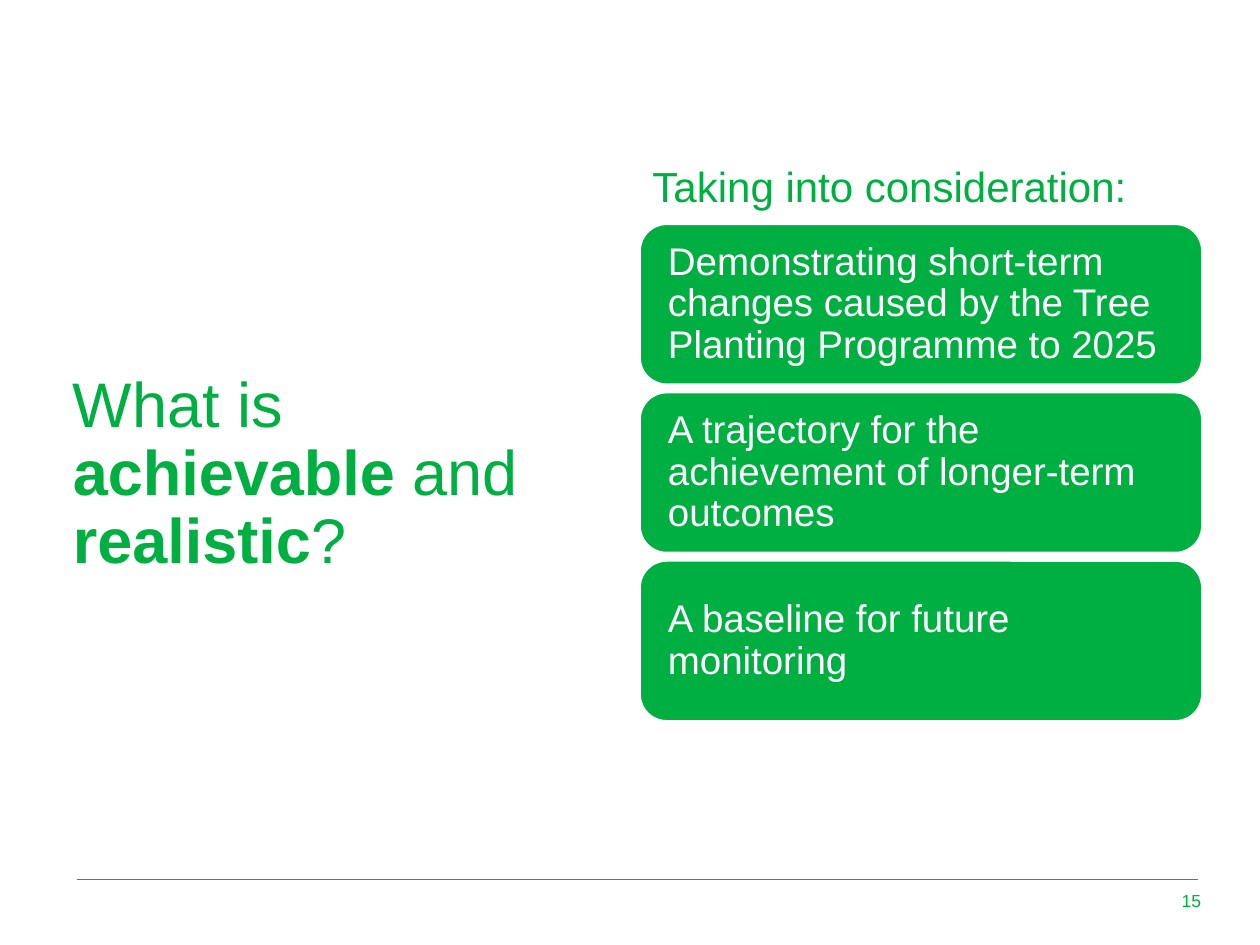
from dataclasses import dataclass

from lxml.etree import SubElement
from pptx import Presentation
from pptx.dml.color import RGBColor
from pptx.enum.shapes import MSO_CONNECTOR as CONN, MSO_SHAPE as SHAPE
from pptx.enum.text import MSO_ANCHOR as ANCHOR, PP_ALIGN as ALIGN
from pptx.oxml.ns import qn
from pptx.util import Inches, Pt


@dataclass(frozen=True)
class Theme:
    font: str = "Arial"
    green: RGBColor = RGBColor(0x00, 0xAF, 0x41)
    white: RGBColor = RGBColor(0xFF, 0xFF, 0xFF)
    question: int = 36
    heading: int = 24
    card: int = 22
    number: int = 10


class Page:
    COLS, ROWS = 100, 75

    def __init__(self, prs, theme):
        self.theme = theme
        self.slide = prs.slides.add_slide(prs.slide_layouts[6])
        self.col = prs.slide_width / self.COLS
        self.row = prs.slide_height / self.ROWS

    def box(self, x, y, w, h):
        return (round(x * self.col), round(y * self.row),
                round(w * self.col), round(h * self.row))

    def fill_text(self, sp, runs, size, color, anchor=ANCHOR.TOP,
                  align=ALIGN.LEFT, spacing=0.9, before=0):
        tf = sp.text_frame
        tf.word_wrap = True
        tf.vertical_anchor = anchor
        p = tf.paragraphs[0]
        p.alignment = align
        p.line_spacing = spacing
        p.space_before = Pt(before)
        for text, bold in runs:
            r = p.add_run()
            r.text = text
            r.font.name = self.theme.font
            r.font.size = Pt(size)
            r.font.bold = bold
            r.font.color.rgb = color

    def text(self, area, runs, size, **style):
        sp = self.slide.shapes.add_textbox(*self.box(*area))
        self.fill_text(sp, runs, size, self.theme.green, **style)

    def card(self, area, text):
        sp = self.slide.shapes.add_shape(SHAPE.ROUNDED_RECTANGLE, *self.box(*area))
        sp.shadow.inherit = False
        sp.fill.solid()
        sp.fill.fore_color.rgb = self.theme.green
        sp.line.color.rgb = self.theme.white
        sp.line.width = Pt(1)
        tf = sp.text_frame
        tf.margin_left = tf.margin_right = Inches(0.16)
        self.fill_text(sp, [(text, False)], self.theme.card, self.theme.white,
                       anchor=ANCHOR.MIDDLE)

    def rule(self, x, y, w):
        left, top, width, _ = self.box(x, y, w, 0)
        line = self.slide.shapes.add_connector(CONN.STRAIGHT, left, top, left + width, top)
        line.line.color.rgb = self.theme.green
        line.line.width = Pt(0.5)
        SubElement(line._element.spPr, qn("a:effectLst"))


def main():
    prs = Presentation()
    prs.slide_width, prs.slide_height = Inches(10), Inches(7.5)
    theme = Theme()
    page = Page(prs, theme)

    page.rule(6.1, 69.8, 89)
    question = [("What is ", False), ("achievable", True), (" and ", False),
                ("realistic", True), ("?", False)]
    page.text((4.8, 29.1, 45.2, 17.9), question, theme.question, before=10)
    page.text((91.8, 69.5, 4.5, 4), [("15", False)], theme.number,
              anchor=ANCHOR.MIDDLE, align=ALIGN.RIGHT, spacing=1)

    considerations = [
        "Demonstrating short-term changes caused by the Tree Planting Programme to 2025",
        "A trajectory for the achievement of longer-term outcomes",
        "A baseline for future monitoring",
    ]
    left, top, width, height, pitch = 50.8, 17.8, 44.6, 12.7, 13.36
    for i, text in enumerate(considerations):
        page.card((left, top + i * pitch, width, height), text)
    page.text((left, 12.7, 45.2, 7.3), [("Taking into consideration:", False)],
              theme.heading, before=10)

    prs.save("out.pptx")


if __name__ == "__main__":
    main()
